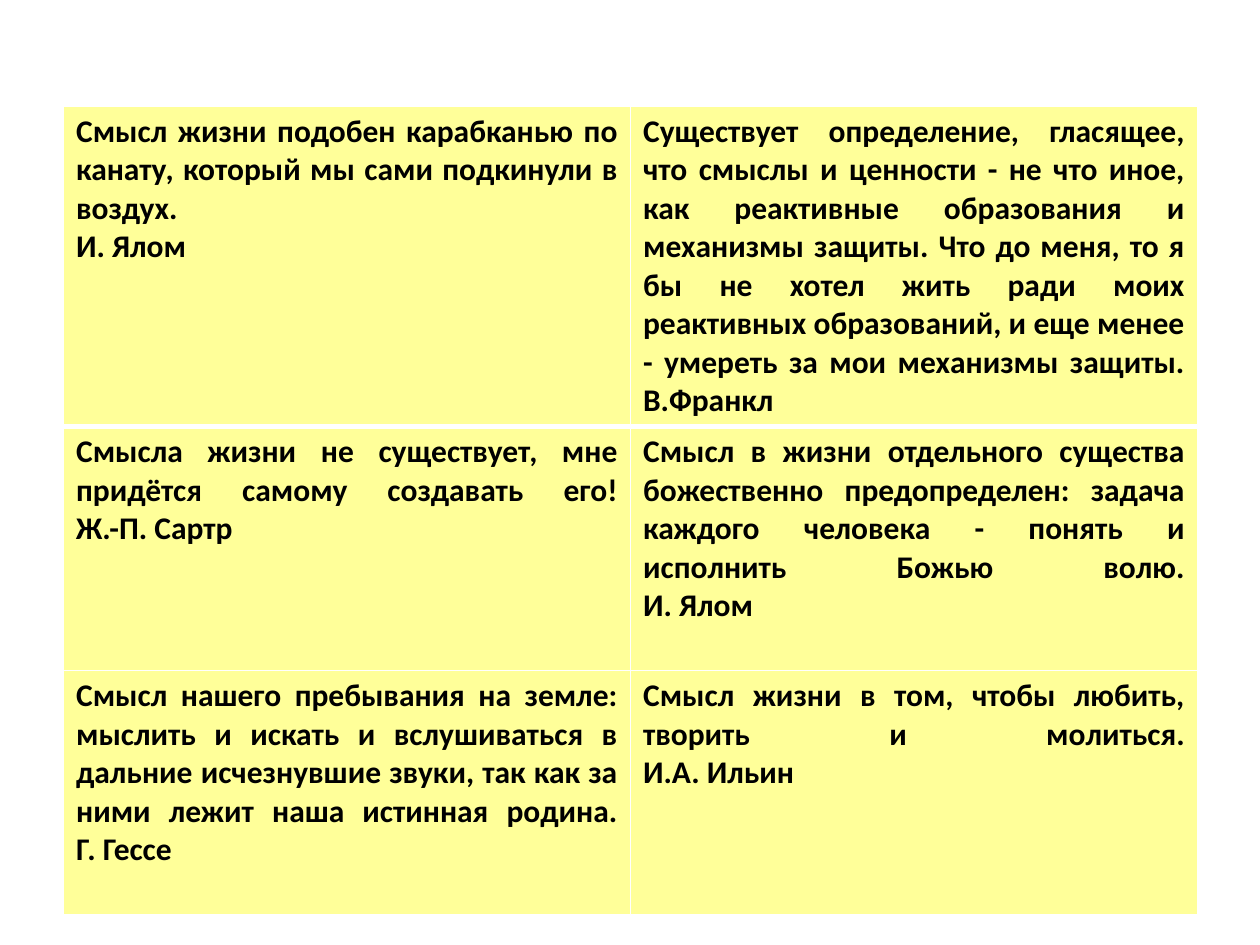
from typing import NamedTuple

from lxml import etree
from pptx import Presentation
from pptx import util as u
from pptx.dml.color import RGBColor
from pptx.enum import text
from pptx.oxml.ns import qn

COLOURS = {"cell": "FFFF99", "text": "000000", "border": "FFFFFF"}
COLUMNS = 2
COLUMN_WIDTH = u.Cm(11.43)
ROW_HEIGHT = u.Cm(4.92)


class Quote(NamedTuple):
    """A saying and the person who said it."""

    saying: str
    author: str


QUOTES = [
    Quote("Смысл жизни подобен карабканью по канату, который мы сами подкинули в воздух.", "И. Ялом"),
    Quote(
        "Существует определение, гласящее, что смыслы и ценности - не что иное, "
        "как реактивные образования и механизмы защиты. Что до меня, то я бы не хотел "
        "жить ради моих реактивных образований, и еще менее - умереть за мои механизмы защиты.",
        "В.Франкл",
    ),
    Quote("Смысла жизни не существует, мне придётся самому создавать его!", "Ж.-П. Сартр"),
    Quote(
        "Смысл в жизни отдельного существа божественно предопределен: "
        "задача каждого человека - понять и исполнить Божью волю.",
        "И. Ялом",
    ),
    Quote(
        "Смысл нашего пребывания на земле: мыслить и искать и вслушиваться в дальние "
        "исчезнувшие звуки, так как за ними лежит наша истинная родина.",
        "Г. Гессе",
    ),
    Quote("Смысл жизни в том, чтобы любить, творить и молиться.", "И.А. Ильин"),
]


def set_borders(cell, widths: dict[str, float]) -> None:
    """Draw the cell borders, given as side and width in points."""
    properties = cell._tc.get_or_add_tcPr()
    for position, (side, width) in enumerate(widths.items()):
        line = etree.Element(qn(f"a:ln{side}"), w=str(u.Pt(width)))
        fill = etree.SubElement(line, qn("a:solidFill"))
        etree.SubElement(fill, qn("a:srgbClr"), val=COLOURS["border"])
        properties.insert(position, line)


def fill_cell(cell, quote: Quote, top: float, bottom: float) -> None:
    """Write a quote into a cell and style the cell."""
    cell.fill.solid()
    cell.fill.fore_color.rgb = RGBColor.from_string(COLOURS["cell"])
    set_borders(cell, {"L": 1, "R": 1, "T": top, "B": bottom})
    para = cell.text_frame.paragraphs[0]
    para.text = f"{quote.saying}\n{quote.author}"
    para.alignment = text.PP_ALIGN.JUSTIFY
    para.font.name = "Calibri"
    para.font.size = u.Pt(18)
    para.font.bold = True
    para.font.color.rgb = RGBColor.from_string(COLOURS["text"])


def main() -> None:
    """Build the slide with the table of quotes."""
    deck = Presentation()
    deck.slide_width, deck.slide_height = u.Cm(25.4), u.Cm(19.05)
    page = deck.slides.add_slide(deck.slide_layouts[6])
    rows = len(QUOTES) // COLUMNS
    table = page.shapes.add_table(
        rows, COLUMNS, u.Cm(1.28), u.Cm(2.14), COLUMN_WIDTH * COLUMNS, ROW_HEIGHT * rows
    ).table
    table.horz_banding = False
    for index, quote in enumerate(QUOTES):
        row, column = divmod(index, COLUMNS)
        top, bottom = (3 if row == 1 else 1), (3 if row == 0 else 1)
        fill_cell(table.cell(row, column), quote, top, bottom)
    deck.save("out.pptx")


if __name__ == "__main__":
    main()
